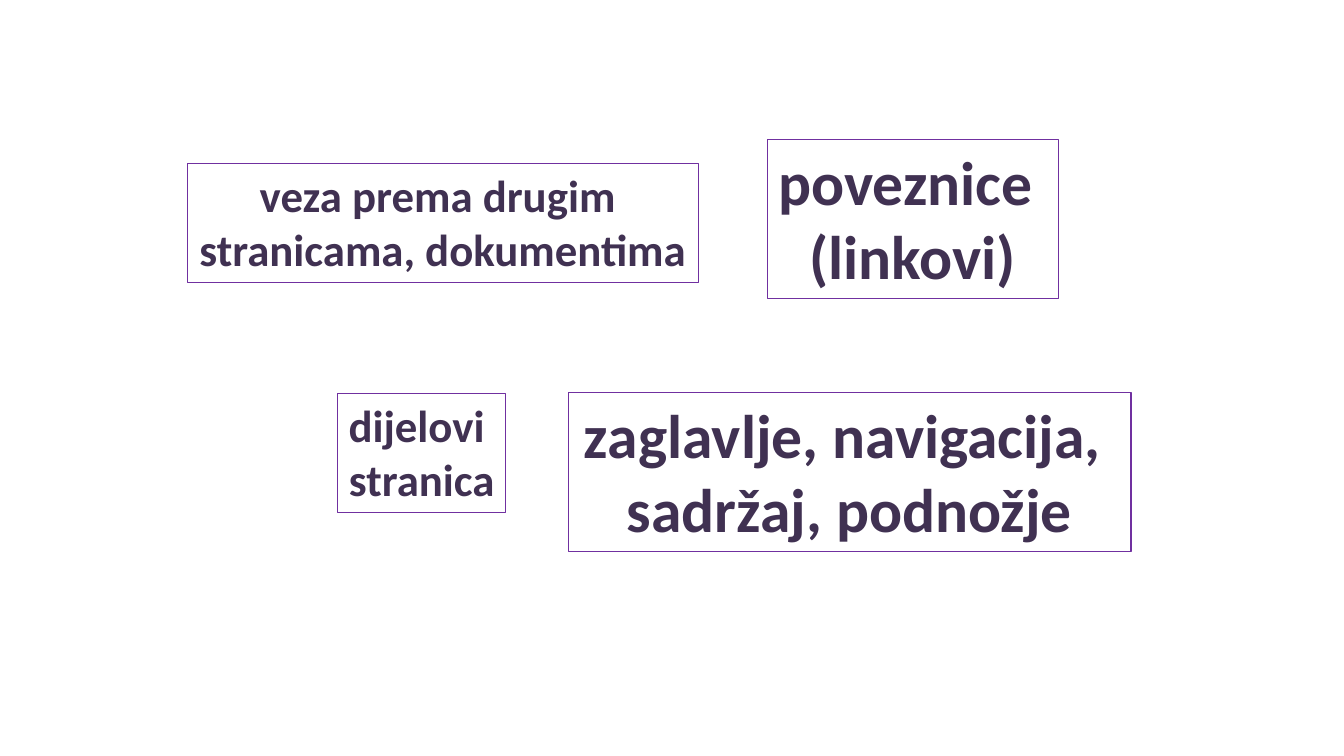
from pptx import Presentation
from pptx.dml.color import RGBColor
from pptx.enum.text import MSO_AUTO_SIZE, PP_ALIGN
from pptx.util import Pt

BORDER = RGBColor(0x70, 0x30, 0xA0)
INK = RGBColor(0x40, 0x31, 0x52)
FONT = "Calibri"
TERM_SIZE, ANSWER_SIZE = 32, 44
TERM_HEIGHT, ANSWER_HEIGHT = 85, 113.9


def add_framed_text(page, left, top, width, height, size, lines):
    """Add an outlined box with one centred bold paragraph per line."""
    box = page.shapes.add_textbox(Pt(left), Pt(top), Pt(width), Pt(height))
    box.line.color.rgb = BORDER
    box.line.width = Pt(0.75)
    frame = box.text_frame
    frame.word_wrap = False
    frame.auto_size = MSO_AUTO_SIZE.SHAPE_TO_FIT_TEXT
    for index, line in enumerate(lines):
        para = frame.add_paragraph() if index else frame.paragraphs[0]
        para.alignment = PP_ALIGN.CENTER
        span = para.add_run()
        span.text = line
        span.font.name = FONT
        span.font.size = Pt(size)
        span.font.bold = True
        span.font.color.rgb = INK


def main():
    deck = Presentation()
    deck.slide_width, deck.slide_height = Pt(960), Pt(540)
    page = deck.slides.add_slide(deck.slide_layouts[6])

    # Links and what they do
    add_framed_text(page, 133.9, 116.6, 365, TERM_HEIGHT, TERM_SIZE,
                    ["veza prema drugim ", "stranicama, dokumentima"])
    add_framed_text(page, 547.9, 99.4, 208.1, ANSWER_HEIGHT, ANSWER_SIZE,
                    ["poveznice ", "(linkovi)"])

    # Parts of a page
    add_framed_text(page, 241.2, 280.8, 120.2, TERM_HEIGHT, TERM_SIZE,
                    ["dijelovi ", "stranica"])
    add_framed_text(page, 406.1, 280.1, 401.8, ANSWER_HEIGHT, ANSWER_SIZE,
                    ["zaglavlje, navigacija, ", "sadržaj, podnožje"])

    deck.save("out.pptx")


if __name__ == "__main__":
    main()
